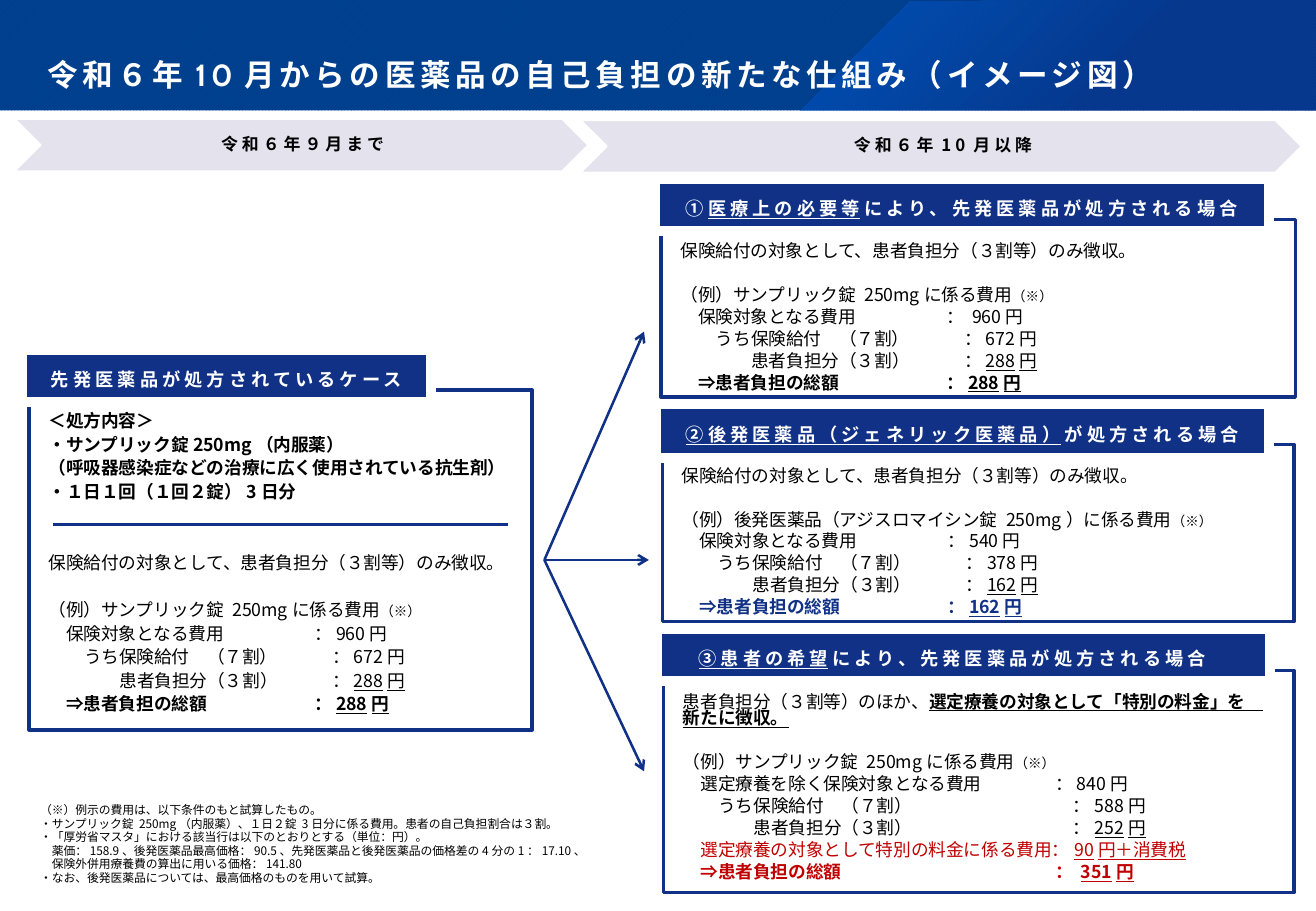
from lxml import etree
from pptx import Presentation, util as u
from pptx.dml.color import RGBColor
from pptx.enum import dml, shapes, text
from pptx.oxml import parse_xml
from pptx.oxml.ns import nsdecls, qn

PX = 9144  # 100 px to the inch
THEME = {
    "navy": "103185", "red": "C00000", "black": "000000", "white": "FFFFFF",
    "lilac": "E4E2ED", "weave": "003579", "band": "004292",
    "glow": "0064DF", "dusk": "0C338E",
    "font": "Noto Sans CJK JP", "latin": "Cabin",
    "title": 18.1, "head": 10.8, "body": 10.5, "phase": 10, "small": 8, "note": 7,
}
KIND = shapes.MSO_SHAPE
ALIGN = text.PP_ALIGN
ANCHOR = text.MSO_ANCHOR


def rgb(name):
    return RGBColor.from_string(THEME[name])


def write(para, runs, size, color="black", gap=0, font="font"):
    """Add (words, marks) runs; marks: b bold, u underline, s small, n navy, r red."""
    for words, marks in runs:
        run = para.add_run()
        run.text = words
        face = run.font
        face.size = u.Pt(THEME["small" if "s" in marks else size])
        face.name = THEME[font]
        face.bold = "b" in marks
        face.underline = "u" in marks
        face.color.rgb = rgb("navy" if "n" in marks else "red" if "r" in marks else color)
        props = run.font._element
        east = etree.SubElement(props, qn("a:ea"))
        east.set("typeface", THEME["font"])
        if gap:
            props.set("spc", str(gap))


def block(kind, at, paint, edge, width, inset=(10, 5, 10, 5), anchor=ANCHOR.MIDDLE):
    """Add a preset shape, ready for text, and return it."""
    shape = slide.shapes.add_shape(kind, *[n * PX for n in at])
    shape.shadow.inherit = False
    if paint:
        shape.fill.solid()
        shape.fill.fore_color.rgb = rgb(paint)
    else:
        shape.fill.background()
    shape.line.color.rgb = rgb(edge)
    shape.line.width = u.Pt(width)
    frame = shape.text_frame
    frame.word_wrap = True
    frame.vertical_anchor = anchor
    frame.margin_left, frame.margin_top, frame.margin_right, frame.margin_bottom = [n * PX for n in inset]
    return shape


deck = Presentation()
deck.slide_width, deck.slide_height = 1083 * PX, 750 * PX
slide = deck.slides.add_slide(deck.slide_layouts[1])
title, notes = slide.placeholders

# Title band
band = slide.shapes.add_shape(KIND.RECTANGLE, 0, 0, 1083 * PX, 91 * PX)
band.shadow.inherit = False
band.line.fill.background()
band.fill.patterned()
band.fill.pattern = dml.MSO_PATTERN.DARK_UPWARD_DIAGONAL
band.fill.fore_color.rgb = rgb("weave")
band.fill.back_color.rgb = rgb("band")

pen = slide.shapes.build_freeform(749, 1, scale=PX)
pen.add_line_segments([(1083, 0), (1083, 91), (658, 91)], close=True)
sheen = pen.convert_to_shape()
sheen.shadow.inherit = False
sheen.line.fill.background()
sheen.fill.solid()
stops = "".join(
    f'<a:gs pos="{spot}"><a:srgbClr val="{THEME[name]}"><a:alpha val="{alpha}"/></a:srgbClr></a:gs>'
    for spot, name, alpha in [(0, "glow", 50000), (62000, "dusk", 55000)])
solid = sheen.element.spPr.find(qn("a:solidFill"))
solid.getparent().replace(solid, parse_xml(
    f'<a:gradFill {nsdecls("a")}><a:gsLst>{stops}</a:gsLst>'
    '<a:path path="circle"><a:fillToRect r="100000" b="100000"/></a:path></a:gradFill>'))
for part in (band, sheen):
    title.element.addprevious(part.element)

title.left, title.top, title.width, title.height = 0, 0, 1083 * PX, 91 * PX
frame = title.text_frame
frame.auto_size = text.MSO_AUTO_SIZE.NONE
frame.vertical_anchor = ANCHOR.BOTTOM
frame.margin_left, frame.margin_top, frame.margin_right, frame.margin_bottom = [n * PX for n in (39, 36, 36, 14)]
para = frame.paragraphs[0]
para.alignment = ALIGN.LEFT
para.line_spacing = 0.9
write(para, [("令和６年10月からの医薬品の自己負担の新たな仕組み（イメージ図）", "b")],
      "title", "white", 270, "latin")

# Phases
for words, at, spot in [
    ("令和６年９月まで", (12, 98, 472, 43), (141, 98, 213, 43)),
    ("令和６年10月以降", (478, 99, 593, 43), (666, 99, 217, 43)),
]:
    block(KIND.CHEVRON, at, "lilac", "white", 1)
    label = slide.shapes.add_textbox(*[n * PX for n in spot])
    frame = label.text_frame
    frame.word_wrap = True
    frame.vertical_anchor = ANCHOR.MIDDLE
    frame.margin_left, frame.margin_top, frame.margin_right, frame.margin_bottom = [n * PX for n in (4, 1, 1, 1)]
    para = frame.paragraphs[0]
    para.alignment = ALIGN.CENTER
    para.line_spacing = 0.9
    write(para, [(words, "b")], "phase", gap=240)

# Panels: box, head, head runs, line pitch, colon column, lead (blank lines before, runs), cost rows
PLAIN = "保険給付の対象として、患者負担分（３割等）のみ徴収。"
BASE = "保険対象となる費用\t："
COVER = "うち保険給付　（７割）\t："
SHARE = "患者負担分（３割）\t："
TOTAL = "⇒患者負担の総額\t："
BRAND = "（例）サンプリック錠 250mgに係る費用"
MARK = ("（※）", "s")
panels = [
    ((24, 321, 414, 280), (18, 288, 337, 43), [("先発医薬品が処方されているケース", "b")], 10, 15,
     [(0, [("＜処方内容＞", "b")]),
      (0, [("・サンプリック錠250mg（内服薬）", "b")]),
      (0, [("（呼吸器感染症などの治療に広く使用されている抗生剤）", "b")]),
      (0, [("・１日１回（１回２錠）3日分", "b")]),
      (2, [(PLAIN, "")]),
      (1, [(BRAND, ""), MARK])],
     [(1, BASE, "", "960円", ""), (2, COVER, "", "672円", ""),
      (4, SHARE, "", "288円", "u"), (1, TOTAL, "b", "288円", "bu")]),
    ((544, 181, 522, 146), (539, 147, 505, 43),
     [("①", "b"), ("医療上の必要等", "bu"), ("により、先発医薬品が処方される場合", "b")], 9, 15,
     [(0, [(PLAIN, "")]), (1, [(BRAND, ""), MARK])],
     [(1, BASE, "", " 960円", ""), (2, COVER, "", "672円", ""),
      (4, SHARE, "", "288円", "u"), (1, TOTAL, "b", "288円", "bu")]),
    ((545, 366, 520, 146), (540, 333, 504, 44),
     [("②後発医薬品（ジェネリック医薬品）", "bu"), ("が処方される場合", "b")], 9, 15,
     [(0, [(PLAIN, "")]),
      (1, [("（例）後発医薬品（アジスロマイシン錠 250mg）に係る費用", ""), MARK])],
     [(1, BASE, "", "540円", ""), (2, COVER, "", "378円", ""),
      (4, SHARE, "", "162円", "u"), (1, TOTAL, "bn", "162円", "bun")]),
    ((546, 552, 519, 183), (541, 518, 504, 43),
     [("③患者の希望", "bu"), ("により、先発医薬品が処方される場合　", "b")], 9, 21,
     [(0, [("患者負担分（３割等）のほか、", ""),
           ("選定療養の対象として「特別の料金」を　新たに徴収。", "bu")]),
      (1, [(BRAND, ""), MARK])],
     [(1, "選定療養を除く" + BASE, "", "840円", ""), (2, COVER, "", "588円", ""),
      (4, SHARE, "", "252円", "u"),
      (1, "選定療養の対象として特別の料金に係る費用：", "r", "90円＋消費税", "ur"),
      (1, TOTAL + " ", "br", "351円", "bur")]),
]
for at, spot, head, pitch, column, lead, costs in panels:
    frame = block(KIND.RECTANGLE, at, None, "navy", 2, (16, 20, 12, 20), ANCHOR.TOP).text_frame
    rows = [(blank, 0, runs) for blank, runs in lead]
    rows += [(0, depth, [("\t" + name, look), (sum_, style)])
             for depth, name, look, sum_, style in costs]
    for i, (blank, depth, runs) in enumerate(rows):
        para = frame.add_paragraph() if i else frame.paragraphs[0]
        para.alignment = ALIGN.LEFT
        para.line_spacing = u.Pt(10 if i == 0 else pitch)
        para.space_before = u.Pt(blank * (pitch + 4))
        para.space_after = u.Pt(4)
        if depth:
            tabs = etree.SubElement(para._p.get_or_add_pPr(), qn("a:tabLst"))
            for count in (depth, column + (depth > 1)):
                tab = etree.SubElement(tabs, qn("a:tab"))
                tab.set("pos", str(u.Pt(count * THEME["body"])))
                tab.set("algn", "l")
        write(para, runs, "body")
    plate = block(KIND.ROUNDED_RECTANGLE, spot, "navy", "white", 6)
    plate.adjustments[0] = 0
    para = plate.text_frame.paragraphs[0]
    para.alignment = ALIGN.CENTER
    para.line_spacing = 1.3
    para.space_after = u.Pt(8)
    write(para, head, "head", "white", 240)

# Divider and arrows
for start, end, tip in [
    ((44, 432), (418, 432), False),
    ((448, 461), (534, 461), True),
    ((448, 461), (530, 273), True),
    ((448, 461), (530, 635), True),
]:
    link = slide.shapes.add_connector(shapes.MSO_CONNECTOR.STRAIGHT, *[n * PX for n in start + end])
    link.line.color.rgb = rgb("navy")
    link.line.width = u.Pt(1.5)
    if tip:
        etree.SubElement(link.line._get_or_add_ln(), qn("a:tailEnd")).set("type", "arrow")
    etree.SubElement(link.element.spPr, qn("a:effectLst"))

# Notes on the sums
notes.left, notes.top, notes.width, notes.height = [n * PX for n in (23, 662, 742, 74)]
frame = notes.text_frame
frame.auto_size = text.MSO_AUTO_SIZE.NONE
for i, words in enumerate([
    "（※）例示の費用は、以下条件のもと試算したもの。",
    "・サンプリック錠 250mg（内服薬）、１日２錠 3日分に係る費用。患者の自己負担割合は３割。",
    "・「厚労省マスタ」における該当行は以下のとおりとする（単位：円）。",
    "　薬価：158.9、後発医薬品最高価格：90.5、先発医薬品と後発医薬品の価格差の4分の1：17.10、",
    "　保険外併用療養費の算出に用いる価格：141.80",
    "・なお、後発医薬品については、最高価格のものを用いて試算。",
]):
    para = frame.add_paragraph() if i else frame.paragraphs[0]
    para.line_spacing = u.Pt(4)
    para.space_before = u.Pt(0)
    para.space_after = u.Pt(4)
    props = para._p.get_or_add_pPr()
    props.set("marL", "0")
    props.set("indent", "0")
    etree.SubElement(props, qn("a:buNone"))
    write(para, [(words, "")], "note")

deck.save("out.pptx")
